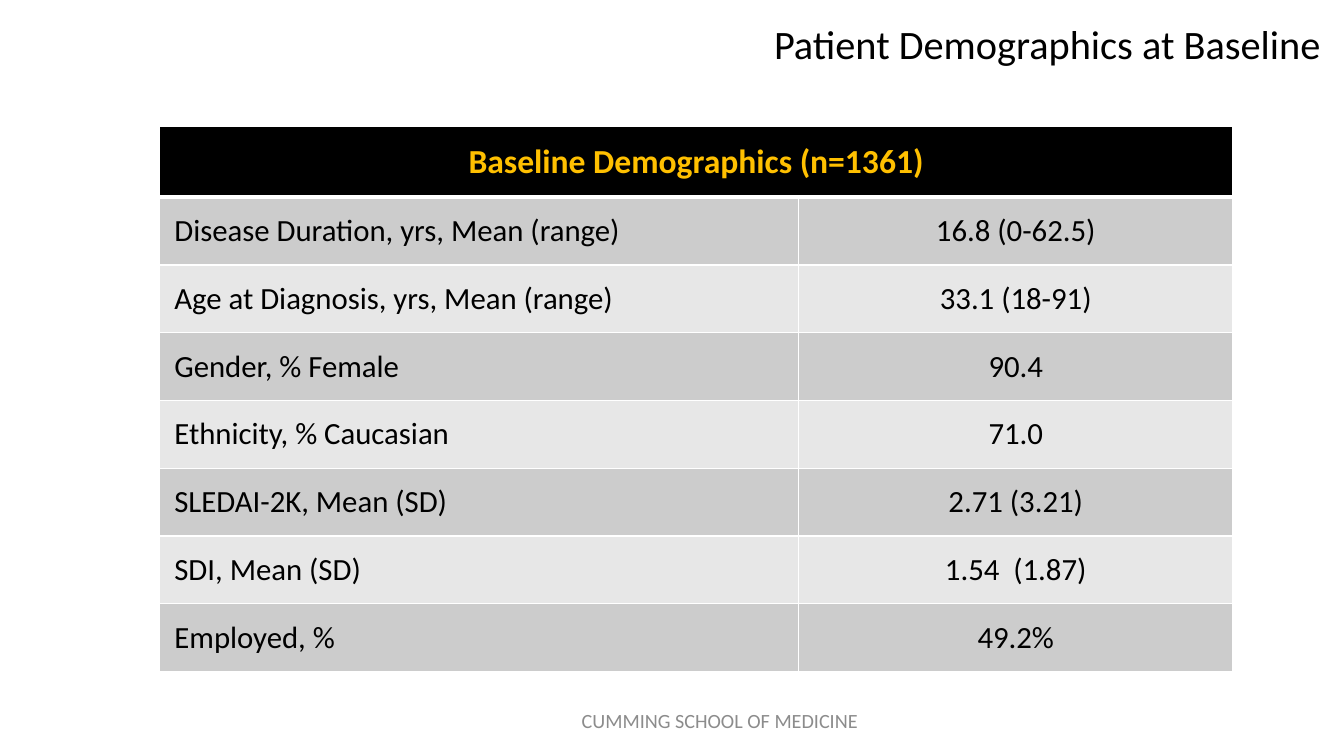
from dataclasses import dataclass

from lxml.etree import Element, SubElement
from pptx import Presentation
from pptx.dml.color import RGBColor
from pptx.enum.text import MSO_ANCHOR, MSO_AUTO_SIZE, PP_ALIGN
from pptx.oxml.ns import qn
from pptx.slide import Slide
from pptx.table import _Cell as Cell
from pptx.text.text import TextFrame
from pptx.util import Emu, Pt

EMU_PER_PX = 9144  # 100 px to the inch
FONT = "Calibri"
BLACK = RGBColor(0x00, 0x00, 0x00)
WHITE = RGBColor(0xFF, 0xFF, 0xFF)
GOLD = RGBColor(0xFF, 0xC0, 0x00)
GREY = RGBColor(0x8C, 0x8C, 0x8C)
DARK_BAND = RGBColor(0xCC, 0xCC, 0xCC)
LIGHT_BAND = RGBColor(0xE7, 0xE7, 0xE7)

COLUMN_WIDTHS = (634, 431)
HEADER_HEIGHT, ROW_HEIGHT = 68, 67
CELL_MARGIN = 15


@dataclass(frozen=True)
class TextStyle:
    size: float
    color: RGBColor
    align: PP_ALIGN
    bold: bool = False


@dataclass(frozen=True)
class Measure:
    label: str
    value: str


TITLE = TextStyle(28.8, BLACK, PP_ALIGN.RIGHT)
HEADER = TextStyle(24, GOLD, PP_ALIGN.CENTER, bold=True)
LABEL = TextStyle(22, BLACK, PP_ALIGN.LEFT)
VALUE = TextStyle(22, BLACK, PP_ALIGN.CENTER)
FOOTER = TextStyle(14.4, GREY, PP_ALIGN.CENTER)

MEASURES = (
    Measure("Disease Duration, yrs, Mean (range)", "16.8 (0-62.5)"),
    Measure("Age at Diagnosis, yrs, Mean (range)", "33.1 (18-91)"),
    Measure("Gender, % Female", "90.4"),
    Measure("Ethnicity, % Caucasian", "71.0"),
    Measure("SLEDAI-2K, Mean (SD)", "2.71 (3.21)"),
    Measure("SDI, Mean (SD)", "1.54  (1.87)"),
    Measure("Employed, %", "49.2%"),
)


def px(length: int) -> Emu:
    return Emu(length * EMU_PER_PX)


def write(frame: TextFrame, text: str, style: TextStyle) -> None:
    frame.text = text
    frame.word_wrap = True
    frame.vertical_anchor = MSO_ANCHOR.MIDDLE
    para = frame.paragraphs[0]
    para.alignment = style.align
    font = para.runs[0].font
    font.name, font.size, font.bold = FONT, Pt(style.size), style.bold
    font.color.rgb = style.color


def set_borders(cell: Cell, bottom: int) -> None:
    """Draw white borders, 1 pt wide except for the bottom one."""
    properties = cell._tc.get_or_add_tcPr()
    widths = {"lnL": 1, "lnR": 1, "lnT": 1, "lnB": bottom}
    for position, (side, width) in enumerate(widths.items()):
        line = Element(qn(f"a:{side}"), w=str(Pt(width)))
        fill = SubElement(line, qn("a:solidFill"))
        SubElement(fill, qn("a:srgbClr"), val=str(WHITE))
        properties.insert(position, line)


def fill_cell(cell: Cell, text: str, style: TextStyle, color: RGBColor, bottom: int = 1) -> None:
    write(cell.text_frame, text, style)
    cell.vertical_anchor = MSO_ANCHOR.MIDDLE
    cell.margin_left = cell.margin_right = px(CELL_MARGIN)
    cell.margin_top = cell.margin_bottom = px(CELL_MARGIN)
    cell.fill.solid()
    cell.fill.fore_color.rgb = color
    set_borders(cell, bottom)


def add_title(page: Slide) -> None:
    title = page.shapes.title
    title.left, title.top, title.width, title.height = px(225), px(0), px(1095), px(87)
    write(title.text_frame, "Patient Demographics at Baseline", TITLE)
    title.text_frame.auto_size = MSO_AUTO_SIZE.NONE


def add_demographics(page: Slide) -> None:
    height = HEADER_HEIGHT + ROW_HEIGHT * len(MEASURES)
    table = page.shapes.add_table(
        len(MEASURES) + 1, len(COLUMN_WIDTHS),
        px(158), px(125), px(sum(COLUMN_WIDTHS)), px(height),
    ).table
    table.first_row = table.horz_banding = False
    for column, width in zip(table.columns, COLUMN_WIDTHS):
        column.width = px(width)
    for index, row in enumerate(table.rows):
        row.height = px(ROW_HEIGHT if index else HEADER_HEIGHT)

    header = table.cell(0, 0)
    header.merge(table.cell(0, 1))
    fill_cell(header, "Baseline Demographics (n=1361)", HEADER, BLACK, bottom=3)
    for index, measure in enumerate(MEASURES, start=1):
        band = DARK_BAND if index % 2 else LIGHT_BAND
        fill_cell(table.cell(index, 0), measure.label, LABEL, band)
        fill_cell(table.cell(index, 1), measure.value, VALUE, band)


def add_footer(page: Slide) -> None:
    box = page.shapes.add_textbox(px(296), px(695), px(836), px(40))
    write(box.text_frame, "CUMMING SCHOOL OF MEDICINE", FOOTER)


def main() -> None:
    deck = Presentation()
    deck.slide_width, deck.slide_height = px(1333), px(750)
    page = deck.slides.add_slide(deck.slide_layouts[5])
    add_title(page)
    add_demographics(page)
    add_footer(page)
    deck.save("out.pptx")


if __name__ == "__main__":
    main()
